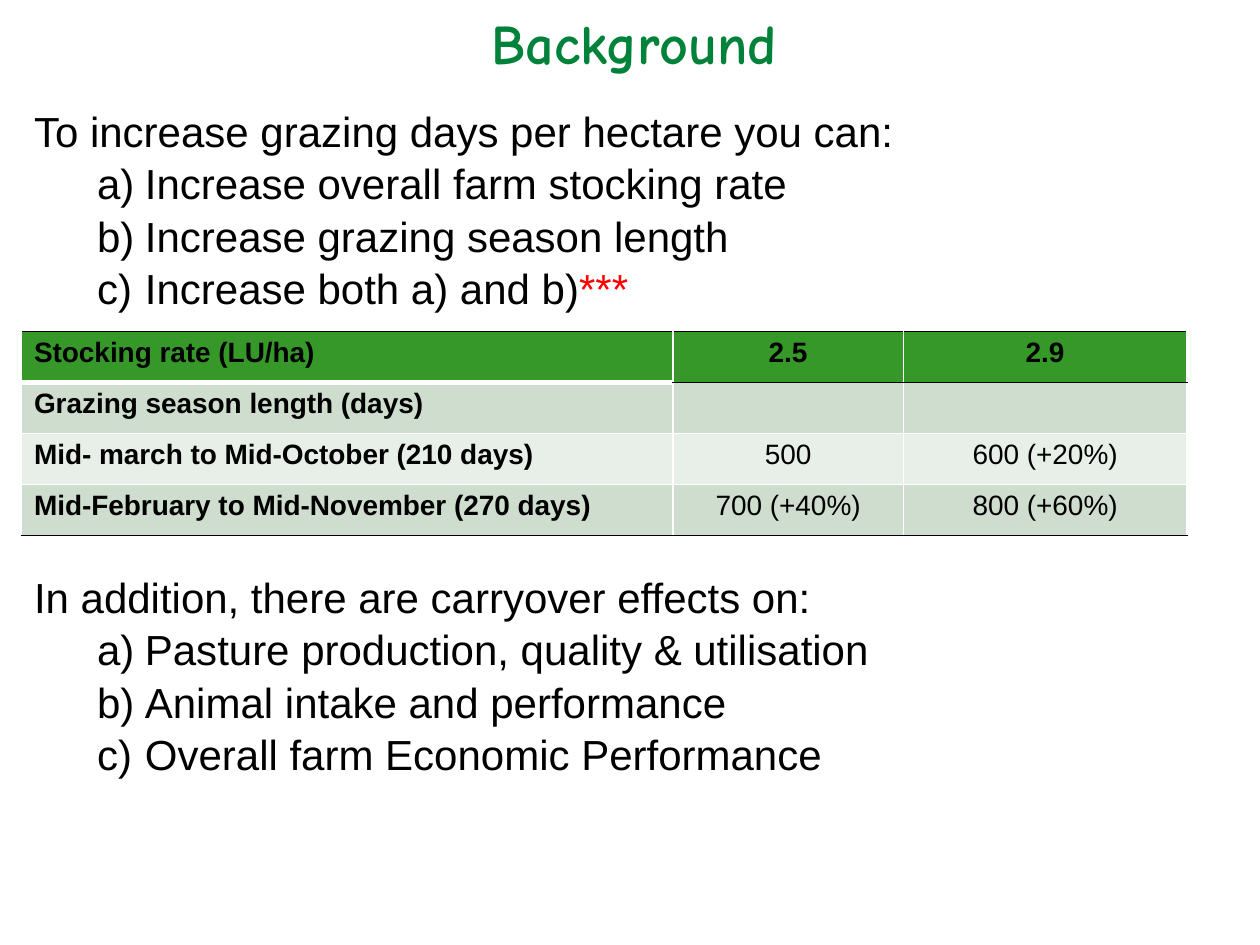
from dataclasses import dataclass

from lxml.etree import SubElement
from pptx import Presentation
from pptx.dml.color import RGBColor
from pptx.enum.text import MSO_ANCHOR, MSO_AUTO_SIZE, PP_ALIGN
from pptx.oxml import parse_xml
from pptx.oxml.ns import nsdecls, qn
from pptx.util import Inches, Pt


@dataclass(frozen=True)
class Theme:
    """Colours, fonts and type sizes of the slide."""
    title: str = "00823B"
    ink: str = "000000"
    accent: str = "FF0000"
    paper: str = "FFFFFF"
    head: str = "359828"
    bands: tuple = ("E8EFE8", "CEDDCD")
    face: str = "Arial"
    fancy: str = "Comic Neue"
    big: int = 32
    body: int = 24
    small: int = 16


THEME = Theme()
WAYS = ("To increase grazing days per hectare you can:",
        "Increase overall farm stocking rate",
        "Increase grazing season length",
        "Increase both a) and b)")
GAINS = ("In addition, there are carryover effects on:",
         "Pasture production, quality & utilisation",
         "Animal intake and performance",
         "Overall farm Economic Performance")
ROWS = (("Stocking rate (LU/ha)", "2.5", "2.9"),
        ("Grazing season length (days)", "", ""),
        ("Mid- march to Mid-October (210 days)", "500", "600 (+20%)"),
        ("Mid-February to Mid-November (270 days)", "700 (+40%)", "800 (+60%)"))
WIDTHS = (5.17, 1.83, 2.25)


def style(run, size, color=THEME.ink, face=THEME.face, bold=False):
    """Give a run its font."""
    font = run.font
    font.name, font.size, font.bold = face, Pt(size), bold
    font.color.rgb = RGBColor.from_string(color)


def place(shape, box):
    """Move a shape to a box given in inches."""
    shape.left, shape.top, shape.width, shape.height = map(Inches, box)


def add_title(shape, box, text):
    """Fill the title placeholder."""
    place(shape, box)
    frame = shape.text_frame
    frame.text = text
    frame.margin_left = frame.margin_right = 0
    frame.margin_top = frame.margin_bottom = 0
    frame.vertical_anchor = MSO_ANCHOR.TOP
    frame.auto_size = MSO_AUTO_SIZE.NONE
    para = frame.paragraphs[0]
    para.alignment, para.line_spacing = PP_ALIGN.CENTER, 0.8
    style(para.runs[0], THEME.big, THEME.title, THEME.fancy, True)


def add_list(shape, box, lines, mark=""):
    """Fill a body placeholder with a lead line and lettered points."""
    place(shape, box)
    frame = shape.text_frame
    frame.text = "\n".join(lines)
    frame.auto_size = MSO_AUTO_SIZE.NONE
    frame.vertical_anchor = MSO_ANCHOR.TOP
    frame.margin_top = Inches(0.07)
    for i, para in enumerate(frame.paragraphs):
        para.level = min(i, 1)
        para.line_spacing = 1.04
        para.space_before = para.space_after = Pt(0)
        props = para._p.get_or_add_pPr()
        props.set("marL", str(Inches(0.88 if i else 0)))
        props.set("indent", str(Inches(-0.38 if i else 0)))
        if i:
            SubElement(props, qn("a:buFont"), typeface="+mj-lt")
            SubElement(props, qn("a:buAutoNum"), type="alphaLcParenR")
        else:
            SubElement(props, qn("a:buNone"))
        style(para.runs[0], THEME.body)
    if mark:
        run = para.add_run()
        run.text = mark
        style(run, THEME.body, THEME.accent)


def edge(cell, top, base, thick=1):
    """Draw the four borders of a cell, white at the sides."""
    sides = (("L", THEME.paper, 1), ("R", THEME.paper, 1),
             ("T", top, 1), ("B", base, thick))
    props = cell._tc.get_or_add_tcPr()
    for i, (side, color, width) in enumerate(sides):
        props.insert(i, parse_xml(
            f'<a:ln{side} {nsdecls("a")} w="{Pt(width)}"><a:solidFill>'
            f'<a:srgbClr val="{color}"/></a:solidFill></a:ln{side}>'))


def add_grid(slide, box, rows):
    """Build the table of stocking rate against season length."""
    table = slide.shapes.add_table(
        len(rows), len(WIDTHS), *map(Inches, box)).table
    for col, width in zip(table.columns, WIDTHS):
        col.width = Inches(width)
    last = len(rows) - 1
    for r, row in enumerate(rows):
        for c, text in enumerate(row):
            cell = table.cell(r, c)
            cell.fill.solid()
            cell.fill.fore_color.rgb = RGBColor.from_string(
                THEME.bands[r % 2] if r else THEME.head)
            top = THEME.ink if r == 0 or (r == 1 and c) else THEME.paper
            base = THEME.ink if r == last or (r == 0 and c) else THEME.paper
            edge(cell, top, base, 3 if r == c == 0 else 1)
            if text:
                cell.text_frame.text = text
                para = cell.text_frame.paragraphs[0]
                para.alignment = PP_ALIGN.CENTER if c else PP_ALIGN.LEFT
                style(para.runs[0], THEME.small, bold=r == 0 or c == 0)


def main():
    """Build and save the slide."""
    deck = Presentation()
    deck.slide_width, deck.slide_height = Inches(10), Inches(7.5)
    slide = deck.slides.add_slide(deck.slide_layouts[3])
    title, ways, gains = list(slide.placeholders)[:3]
    add_title(title, (0.27, 0.17, 9.53, 0.66), "Background")
    add_list(ways, (0.17, 0.75, 9.17, 1.72), WAYS, "***")
    add_grid(slide, (0.17, 2.63, sum(WIDTHS), 1.62), ROWS)
    add_list(gains, (0.17, 4.45, 9.17, 1.72), GAINS)
    deck.save("out.pptx")


if __name__ == "__main__":
    main()
